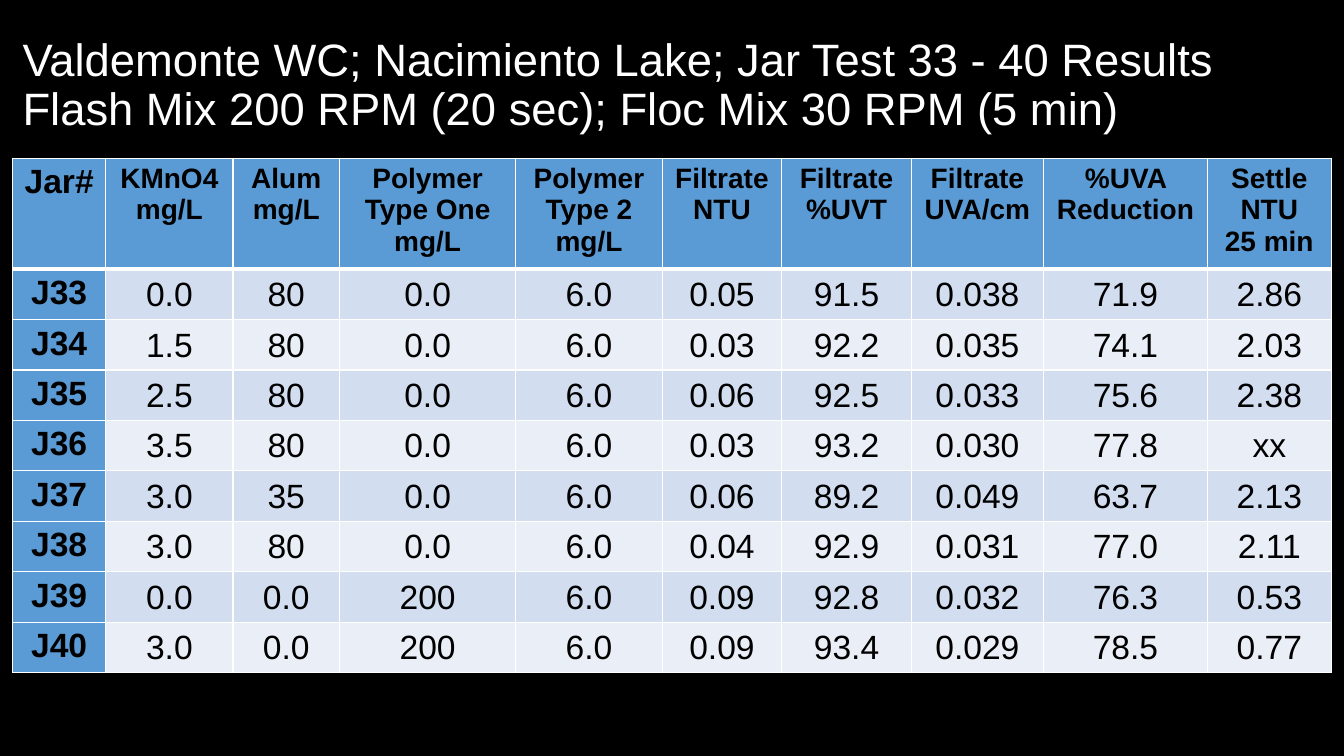
from dataclasses import dataclass

from lxml import etree
from pptx import Presentation
from pptx.dml.color import RGBColor
from pptx.enum.text import MSO_ANCHOR, PP_ALIGN
from pptx.oxml.ns import qn
from pptx.slide import Slide
from pptx.table import _Cell
from pptx.text.text import TextFrame
from pptx.util import Pt

CENTER, LEFT = PP_ALIGN.CENTER, PP_ALIGN.LEFT
MIDDLE, TOP = MSO_ANCHOR.MIDDLE, MSO_ANCHOR.TOP

COLORS = {
    "background": "000000",
    "title": "FFFFFF",
    "text": "000000",
    "border": "FFFFFF",
    "header": "5B9BD5",
    "odd": "D2DEEF",
    "even": "EAEFF7",
}
FONT = "Arial"
TITLE = (
    "Valdemonte WC; Nacimiento Lake; Jar Test 33 - 40 Results\v"
    "Flash Mix 200 RPM (20 sec); Floc Mix 30 RPM (5 min)"
)
HEADER_HEIGHT, ROW_HEIGHT = 74.6, 33.95


@dataclass(frozen=True)
class Column:
    heading: str
    width: float
    size: float = 20


COLUMNS = [
    Column("Jar#", 66.5, 24),
    Column("KMnO4\nmg/L", 91),
    Column("Alum\nmg/L", 76),
    Column("Polymer\nType One\nmg/L", 126),
    Column("Polymer\nType 2\nmg/L", 104.5),
    Column("Filtrate\nNTU", 85.5),
    Column("Filtrate\n%UVT", 92.5),
    Column("Filtrate\nUVA/cm", 94.5),
    Column("%UVA Reduction", 117),
    Column("Settle\nNTU\n25 min", 88.5),
]
RESULTS = [
    ("J33", "0.0", "80", "0.0", "6.0", "0.05", "91.5", "0.038", "71.9", "2.86"),
    ("J34", "1.5", "80", "0.0", "6.0", "0.03", "92.2", "0.035", "74.1", "2.03"),
    ("J35", "2.5", "80", "0.0", "6.0", "0.06", "92.5", "0.033", "75.6", "2.38"),
    ("J36", "3.5", "80", "0.0", "6.0", "0.03", "93.2", "0.030", "77.8", "xx"),
    ("J37", "3.0", "35", "0.0", "6.0", "0.06", "89.2", "0.049", "63.7", "2.13"),
    ("J38", "3.0", "80", "0.0", "6.0", "0.04", "92.9", "0.031", "77.0", "2.11"),
    ("J39", "0.0", "0.0", "200", "6.0", "0.09", "92.8", "0.032", "76.3", "0.53"),
    ("J40", "3.0", "0.0", "200", "6.0", "0.09", "93.4", "0.029", "78.5", "0.77"),
]


def write_text(
    frame: TextFrame,
    text: str,
    *,
    size: float,
    color: str = "text",
    bold: bool = False,
    align: PP_ALIGN = CENTER,
    spacing: float = 1.0,
) -> None:
    frame.text = text
    for paragraph in frame.paragraphs:
        paragraph.alignment = align
        paragraph.line_spacing = spacing
        for run in paragraph.runs:
            run.font.name = FONT
            run.font.size = Pt(size)
            run.font.bold = bold
            run.font.color.rgb = RGBColor.from_string(COLORS[color])


def set_borders(cell: _Cell, top: float = 1, bottom: float = 1) -> None:
    properties = cell._tc.get_or_add_tcPr()
    widths = {"lnL": 1, "lnR": 1, "lnT": top, "lnB": bottom}
    for position, (side, width) in enumerate(widths.items()):
        line = etree.Element(qn(f"a:{side}"), w=str(Pt(width)))
        fill = etree.SubElement(line, qn("a:solidFill"))
        etree.SubElement(fill, qn("a:srgbClr"), val=COLORS["border"])
        properties.insert(position, line)


def fill_cell(cell: _Cell, color: str) -> None:
    cell.fill.solid()
    cell.fill.fore_color.rgb = RGBColor.from_string(COLORS[color])


def add_title(slide: Slide) -> None:
    shape = slide.shapes.add_textbox(Pt(9), Pt(9.5), Pt(938), Pt(104.5))
    shape.text_frame.word_wrap = True
    shape.text_frame.vertical_anchor = MIDDLE
    write_text(shape.text_frame, TITLE, size=32.4, color="title", align=LEFT, spacing=0.9)


def add_results(slide: Slide) -> None:
    width = sum(column.width for column in COLUMNS)
    height = HEADER_HEIGHT + ROW_HEIGHT * len(RESULTS)
    shape = slide.shapes.add_table(
        len(RESULTS) + 1, len(COLUMNS), Pt(9), Pt(113), Pt(width), Pt(height)
    )
    table = shape.table
    for row in table.rows:
        row.height = Pt(ROW_HEIGHT)
    table.rows[0].height = Pt(HEADER_HEIGHT)

    for index, column in enumerate(COLUMNS):
        table.columns[index].width = Pt(column.width)
        cell = table.cell(0, index)
        write_text(cell.text_frame, column.heading, size=column.size, bold=True)
        fill_cell(cell, "header")
        set_borders(cell, bottom=3)

    for row_index, values in enumerate(RESULTS, start=1):
        band = "odd" if row_index % 2 else "even"
        for index, value in enumerate(values):
            cell = table.cell(row_index, index)
            is_jar = index == 0
            write_text(cell.text_frame, value, size=24, bold=is_jar)
            fill_cell(cell, "header" if is_jar else band)
            set_borders(cell, top=3 if row_index == 1 else 1)
            cell.vertical_anchor = TOP if is_jar else MIDDLE
            if not is_jar:
                cell.margin_left = cell.margin_right = cell.margin_top = Pt(0.75)
                cell.margin_bottom = Pt(0)


def main() -> None:
    presentation = Presentation()
    presentation.slide_width, presentation.slide_height = Pt(960), Pt(540)
    slide = presentation.slides.add_slide(presentation.slide_layouts[6])
    slide.background.fill.solid()
    slide.background.fill.fore_color.rgb = RGBColor.from_string(COLORS["background"])
    add_title(slide)
    add_results(slide)
    presentation.save("out.pptx")


if __name__ == "__main__":
    main()
